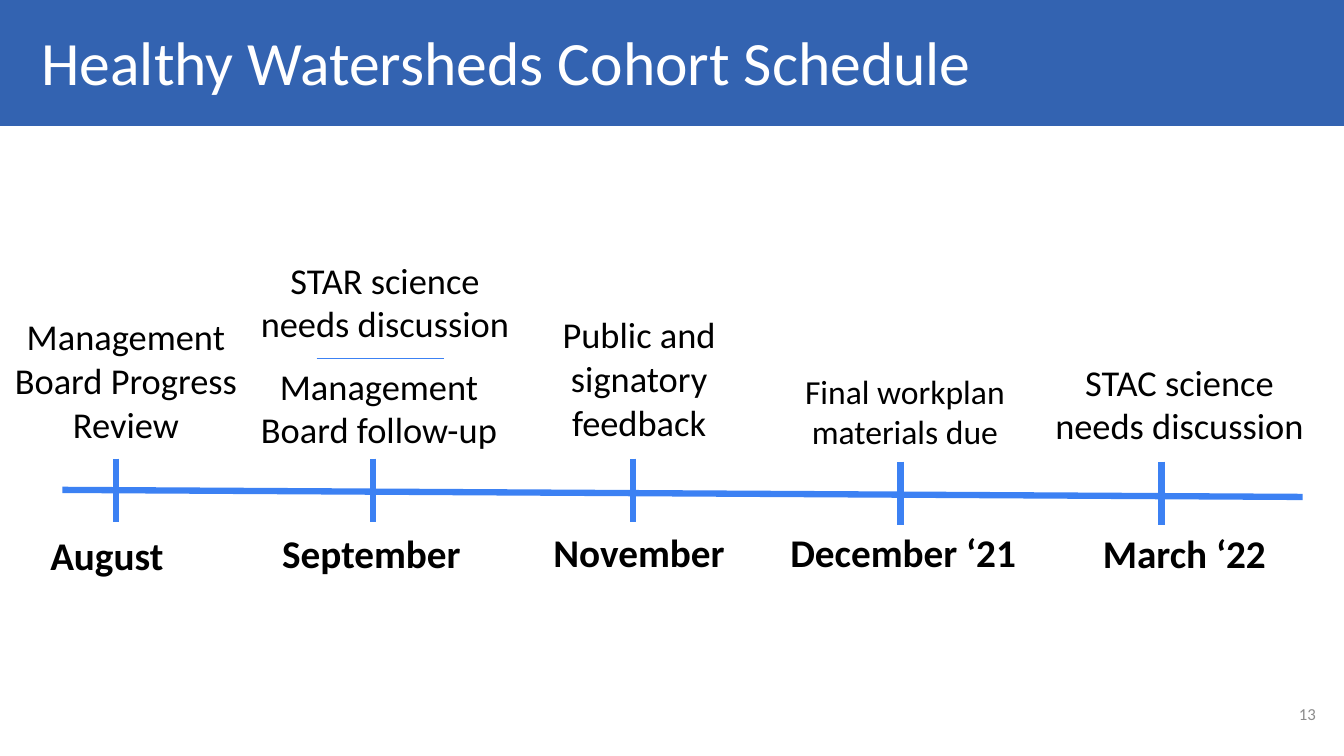
"""Build the Healthy Watersheds cohort timeline slide."""
from typing import NamedTuple

from lxml import etree
from pptx import Presentation
from pptx.dml.color import RGBColor
from pptx.enum.shapes import MSO_CONNECTOR, MSO_SHAPE
from pptx.enum.text import MSO_ANCHOR, MSO_AUTO_SIZE, PP_ALIGN
from pptx.oxml.ns import qn
from pptx.util import Emu, Inches, Pt

LEFT, CENTER, RIGHT = PP_ALIGN.LEFT, PP_ALIGN.CENTER, PP_ALIGN.RIGHT
TOP, MIDDLE = MSO_ANCHOR.TOP, MSO_ANCHOR.MIDDLE
NO_FIT = MSO_AUTO_SIZE.NONE
STRAIGHT, RECT = MSO_CONNECTOR.STRAIGHT, MSO_SHAPE.RECTANGLE

COLORS = {"band": "3363B1", "line": "3C81F3", "text": "000000",
          "title": "FFFFFF", "number": "8C8C8C"}
FONT = "Calibri"
WIDTH, HEIGHT = Inches(13.33), Inches(7.5)
COLS, ROWS = 13.33, 7.5
TITLE_ONLY = 5


class Box(NamedTuple):
    left: float
    top: float
    width: float
    height: float


class Style(NamedTuple):
    size: int
    color: str = "text"
    bold: bool = False
    align: PP_ALIGN = LEFT
    anchor: MSO_ANCHOR = TOP


class Label(NamedTuple):
    text: str
    box: Box
    size: int = 26


class Milestone(NamedTuple):
    tick: float
    tick_top: float
    month: Label
    events: list[Label]


MILESTONES = [
    Milestone(1.15, 4.55, Label("August", Box(0.4, 5.22, 1.91, 0.57), 28),
              [Label("Management Board Progress Review", Box(-0.17, 3.07, 2.84, 1.41))]),
    Milestone(3.7, 4.55, Label("September", Box(2.7, 5.2, 2.08, 0.57), 28),
              [Label("STAR science needs discussion", Box(2.4, 2.51, 2.84, 0.98)),
               Label("Management Board follow-up", Box(2.34, 3.56, 2.84, 0.98))]),
    Milestone(6.28, 4.55, Label("November", Box(5.39, 5.19, 1.91, 0.57), 28),
              [Label("Public and signatory feedback", Box(4.92, 3.05, 2.84, 1.41))]),
    Milestone(8.93, 4.58, Label("December ‘21", Box(7.74, 5.19, 2.66, 0.57), 28),
              [Label("Final workplan materials due", Box(7.24, 3.63, 3.47, 0.91), 24)]),
    Milestone(11.52, 4.58, Label("March ‘22", Box(10.84, 5.2, 1.91, 0.57), 28),
              [Label("STAC science needs discussion", Box(10.28, 3.52, 2.84, 0.98))]),
]
TICK_HEIGHT = 0.63


def col(n: float) -> Emu:
    return Emu(round(WIDTH * n / COLS))


def row(n: float) -> Emu:
    return Emu(round(HEIGHT * n / ROWS))


def place(box: Box) -> tuple[Emu, Emu, Emu, Emu]:
    return col(box.left), row(box.top), col(box.width), row(box.height)


def rgb(name: str) -> RGBColor:
    return RGBColor.from_string(COLORS[name])


def write(sp, text: str, style: Style) -> None:
    tf = sp.text_frame
    tf.word_wrap = True
    tf.auto_size = NO_FIT
    tf.vertical_anchor = style.anchor
    p = tf.paragraphs[0]
    p.alignment = style.align
    r = p.add_run()
    r.text = text
    r.font.name = FONT
    r.font.size = Pt(style.size)
    r.font.bold = style.bold
    r.font.color.rgb = rgb(style.color)


def add_text(slide, text: str, box: Box, style: Style) -> None:
    write(slide.shapes.add_textbox(*place(box)), text, style)


def add_line(slide, x1: float, y1: float, x2: float, y2: float, weight: float = 4.5) -> None:
    ln = slide.shapes.add_connector(STRAIGHT, col(x1), row(y1), col(x2), row(y2))
    ln.line.color.rgb = rgb("line")
    ln.line.width = Pt(weight)
    etree.SubElement(ln.element.spPr, qn("a:effectLst"))


def add_header(slide, text: str) -> None:
    title = slide.shapes.title
    band = slide.shapes.add_shape(RECT, *place(Box(-0.02, 0, 13.37, 1.25)))
    band.shadow.inherit = False
    band.fill.solid()
    band.fill.fore_color.rgb = rgb("band")
    band.line.fill.background()
    title.element.addprevious(band.element)
    title.left, title.top, title.width, title.height = place(Box(0.31, 0.19, 12.07, 0.84))
    write(title, text, Style(44, "title"))


def add_milestone(slide, m: Milestone) -> None:
    add_line(slide, m.tick, m.tick_top, m.tick, m.tick_top + TICK_HEIGHT)
    add_text(slide, m.month.text, m.month.box, Style(m.month.size, bold=True))
    for event in m.events:
        add_text(slide, event.text, event.box, Style(event.size, align=CENTER))


def main() -> None:
    prs = Presentation()
    prs.slide_width, prs.slide_height = WIDTH, HEIGHT
    slide = prs.slides.add_slide(prs.slide_layouts[TITLE_ONLY])
    add_header(slide, "Healthy Watersheds Cohort Schedule")
    add_line(slide, 0.62, 4.86, 12.92, 4.93)
    for m in MILESTONES:
        add_milestone(slide, m)
    add_line(slide, 3.14, 3.56, 4.4, 3.56, 0.5)
    add_text(slide, "13", Box(12.35, 6.8, 0.8, 0.57),
             Style(12, "number", align=RIGHT, anchor=MIDDLE))
    prs.save("out.pptx")


if __name__ == "__main__":
    main()
